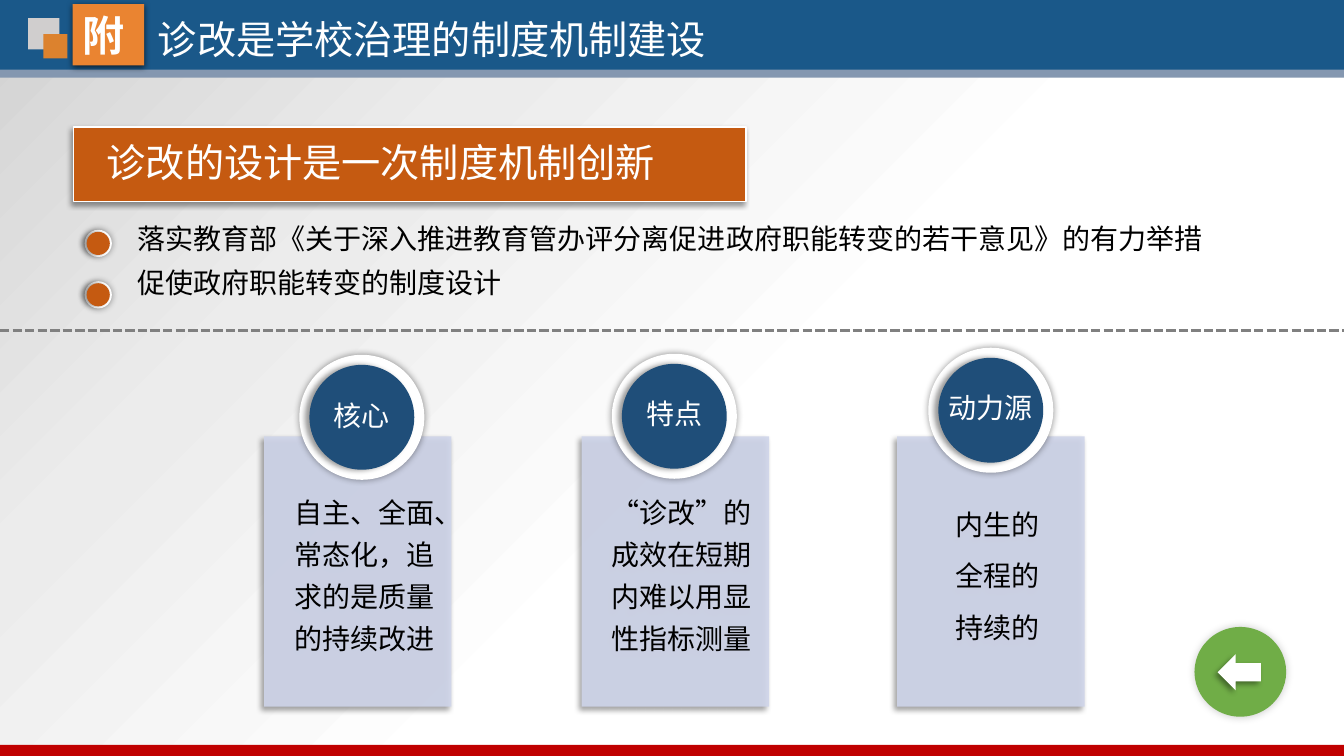
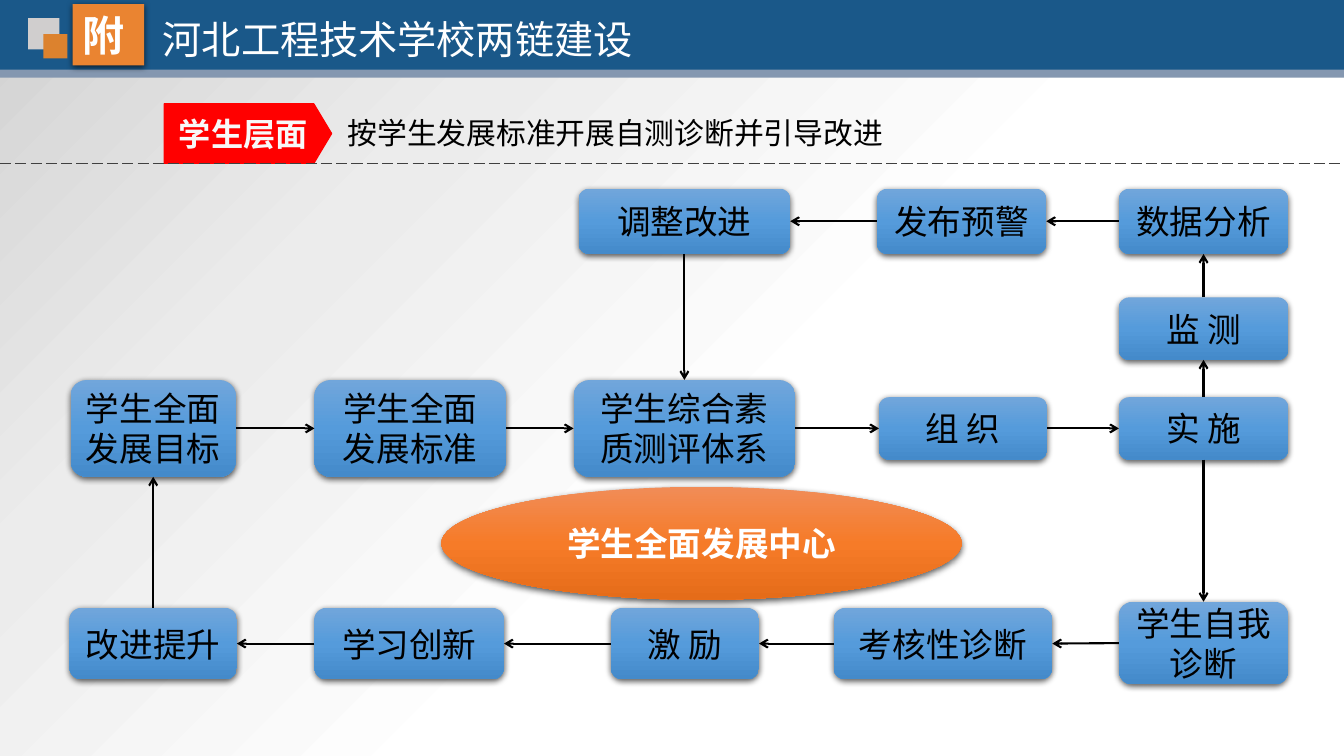
from lxml import etree
from pptx import Presentation
from pptx.dml.color import RGBColor
from pptx.enum.dml import MSO_LINE
from pptx.enum.shapes import MSO_CONNECTOR, MSO_SHAPE
from pptx.enum.text import MSO_ANCHOR, MSO_AUTO_SIZE, PP_ALIGN
from pptx.oxml.ns import qn
from pptx.util import Pt

# Lengths are px, 100 to the inch
PX = 9144
SLIDE_W, SLIDE_H = 12192000, 6858000
FULL_W = 1333
FONT = "Noto Sans CJK SC"

# Enum members
RECT, ROUND_RECT, OVAL = MSO_SHAPE.RECTANGLE, MSO_SHAPE.ROUNDED_RECTANGLE, MSO_SHAPE.OVAL
HOME_PLATE, LEFT_ARROW = MSO_SHAPE.PENTAGON, MSO_SHAPE.LEFT_ARROW
STRAIGHT = MSO_CONNECTOR.STRAIGHT
SHORT_DASH, LONG_DASH = MSO_LINE.SQUARE_DOT, MSO_LINE.LONG_DASH
MIDDLE, TOP_ANCHOR = MSO_ANCHOR.MIDDLE, MSO_ANCHOR.TOP
ALIGN_LEFT, ALIGN_CENTER = PP_ALIGN.LEFT, PP_ALIGN.CENTER
NO_FIT = MSO_AUTO_SIZE.NONE

# Connection sites of a rectangle
TOP, LEFT, BOTTOM, RIGHT = range(4)

# Colours
WHITE = RGBColor(0xFF, 0xFF, 0xFF)
OFF_WHITE = RGBColor(0xF8, 0xF8, 0xF8)
BLACK = RGBColor(0, 0, 0)
GREY = RGBColor(0x80, 0x80, 0x80)
DARK_GREY = RGBColor(0x40, 0x40, 0x40)
LIGHT_GREY = RGBColor(0xD0, 0xCE, 0xCE)
HEADER_BLUE = RGBColor(0x1A, 0x58, 0x89)
STRIPE_BLUE = RGBColor(0x84, 0x97, 0xB0)
DEEP_BLUE = RGBColor(0x1F, 0x4E, 0x79)
CARD_BLUE = RGBColor(0xCF, 0xD5, 0xEA)
BADGE_ORANGE = RGBColor(0xEA, 0x84, 0x31)
SQUARE_ORANGE = RGBColor(0xDC, 0x82, 0x2E)
RUST = RGBColor(0xC5, 0x5A, 0x11)
GREEN = RGBColor(0x70, 0xAD, 0x47)
RED = RGBColor(0xFF, 0, 0)
DARK_RED = RGBColor(0xC0, 0, 0)

# Gradients: stops in percent, then the angle
PAGE_GRADIENT = [(0, RGBColor(0xD2, 0xD2, 0xD2)), (27, RGBColor(0xEC, 0xEC, 0xEC)),
                 (57, WHITE)], 45
NODE_GRADIENT = [(0, RGBColor(0x71, 0xA6, 0xDB)), (50, RGBColor(0x55, 0x9B, 0xDB)),
                 (100, RGBColor(0x44, 0x8A, 0xCA))], 90
CENTRE_GRADIENT = [(0, RGBColor(0xF1, 0x8C, 0x57)), (50, RGBColor(0xF6, 0x7B, 0x28)),
                   (100, RGBColor(0xE5, 0x6C, 0x19))], 90

# Shadows: opacity in percent, blur and distance in points, direction
DROP = 40, 4, 3, 135
HALO = 40, 5, 0, 0
SIDE = 40, 4, 3, 180
SOFT = 63, 4.5, 1.5, 90
BUTTON = 20, 6, 0, 225


def add_xml(parent, tag, **attributes):
    return etree.SubElement(parent, qn(tag), {k: str(v) for k, v in attributes.items()})


def set_gradient(fill, owner, gradient):
    """Give the fill the stops and angle of a gradient."""
    stops, angle = gradient
    fill.gradient()
    grad = owner.find(".//" + qn("a:gradFill"))
    for child in list(grad):
        grad.remove(child)
    stop_list = add_xml(grad, "a:gsLst")
    for percent, color in stops:
        add_xml(add_xml(stop_list, "a:gs", pos=percent * 1000), "a:srgbClr", val=color)
    add_xml(grad, "a:lin", ang=angle * 60000, scaled=0)


class Deck:
    def __init__(self):
        self.prs = Presentation()
        self.prs.slide_width, self.prs.slide_height = SLIDE_W, SLIDE_H
        master = self.prs.slide_master
        set_gradient(master.background.fill, master.element, PAGE_GRADIENT)
        self.layout = self.prs.slide_layouts[1]
        for footer in [p for p in self.layout.placeholders if p.placeholder_format.idx >= 10]:
            self.layout.shapes.element.remove(footer.element)
        self.slide = None

    def new_slide(self, title, left):
        first = self.slide is None
        self.slide = self.prs.slides.add_slide(self.layout)
        if first:
            self.header()
        heading = self.slide.shapes.title
        self.place(heading, left, 6, 575, 65)
        self.set_text(heading, title, 28, WHITE)

    def header(self):
        """Draw the header bands once and keep them in the layout."""
        bands = [
            self.shape(RECT, 0, 0, FULL_W + 1, 76, HEADER_BLUE),
            self.shape(RECT, 0, 69, FULL_W + 1, 8, STRIPE_BLUE),
            self.shape(RECT, 28, 18, 31, 31, LIGHT_GREY),
            self.shape(RECT, 43, 34, 24, 24, SQUARE_ORANGE),
        ]
        badge = self.shape(RECT, 72, 4, 71, 61, BADGE_ORANGE, SOFT)
        self.set_text(badge, "附", 30, WHITE, bold=True, align=ALIGN_LEFT,
                      insets=(10, 0, 10, 0))
        for part in bands + [badge]:
            self.layout.shapes.element.append(part.element)

    def place(self, shape, left, top, width, height):
        shape.left, shape.top = left * PX, top * PX
        shape.width, shape.height = width * PX, height * PX

    def shape(self, kind, left, top, width, height, fill, shadow=None, line=None, opacity=100):
        shape = self.slide.shapes.add_shape(
            kind, left * PX, top * PX, width * PX, height * PX)
        if isinstance(fill, RGBColor):
            shape.fill.solid()
            shape.fill.fore_color.rgb = fill
        else:
            set_gradient(shape.fill, shape.element.spPr, fill)
        if opacity < 100:
            color = shape.element.spPr.find(".//" + qn("a:srgbClr"))
            add_xml(color, "a:alpha", val=opacity * 1000)
        if line:
            shape.line.color.rgb = line
            shape.line.width = Pt(1)
        else:
            shape.line.fill.background()
        shape.shadow.inherit = False
        if shadow:
            strength, blur, distance, direction = shadow
            outer = add_xml(shape.element.spPr.find(qn("a:effectLst")), "a:outerShdw",
                            blurRad=Pt(blur), dist=Pt(distance), dir=direction * 60000,
                            algn="ctr", rotWithShape=0)
            black = add_xml(outer, "a:srgbClr", val=BLACK)
            add_xml(black, "a:alpha", val=strength * 1000)
        return shape

    def set_text(self, shape, text, size, color, bold=False, align=ALIGN_CENTER, anchor=MIDDLE,
                 insets=(10, 5, 10, 5), wrap=True, leading=None, after=0):
        frame = shape.text_frame
        frame.text = text
        frame.auto_size = NO_FIT
        frame.word_wrap = wrap
        frame.vertical_anchor = anchor
        (frame.margin_left, frame.margin_top,
         frame.margin_right, frame.margin_bottom) = [inset * PX for inset in insets]
        for paragraph in frame.paragraphs:
            paragraph.alignment = align
            paragraph.space_before = Pt(0)
            paragraph.space_after = Pt(after)
            if leading:
                paragraph.line_spacing = Pt(leading)
            for run in paragraph.runs:
                run.font.size, run.font.bold, run.font.name = Pt(size), bold, FONT
                run.font.color.rgb = color
                properties = run._r.get_or_add_rPr()
                properties.set("lang", "zh-CN")
                add_xml(properties, "a:ea", typeface=FONT)

    def body(self, text, box, size, **style):
        """Fill the body placeholder with unmarked lines."""
        body = self.slide.placeholders[1]
        self.place(body, *box)
        self.set_text(body, text, size, BLACK, align=ALIGN_LEFT, **style)
        for paragraph in body.text_frame.paragraphs:
            properties = paragraph._p.get_or_add_pPr()
            properties.set("marL", "0")
            properties.set("indent", "0")
            add_xml(properties, "a:buNone")

    def connector(self, color, width, start=(0, 0), end=(0, 0)):
        x1, y1, x2, y2 = [value * PX for value in (*start, *end)]
        line = self.slide.shapes.add_connector(STRAIGHT, x1, y1, x2, y2)
        line.line.color.rgb = color
        line.line.width = Pt(width)
        add_xml(line.element.spPr, "a:effectLst")
        return line

    def divider(self, top, color, width, dash):
        line = self.connector(color, width, (0, top), (FULL_W, top))
        line.line.dash_style = dash

    def arrow(self, source, source_side, target, target_side):
        line = self.connector(BLACK, 1.5)
        line.begin_connect(source, source_side)
        line.end_connect(target, target_side)
        add_xml(line.element.spPr.find(qn("a:ln")), "a:tailEnd", type="arrow")

    def ringed_disc(self, left, top, size, rim, color):
        self.shape(OVAL, left, top, size, size, WHITE, HALO)
        inner = size - 2 * rim
        return self.shape(OVAL, left + rim, top + rim, inner, inner, color, SIDE)

    def node(self, text, left, middle, width, height):
        node = self.shape(ROUND_RECT, left, middle - height // 2, width, height,
                          NODE_GRADIENT, SOFT)
        self.set_text(node, text, 24, BLACK)
        return node


def build_mechanism(deck):
    deck.new_slide("诊改是学校治理的制度机制建设", 141)

    # Banner and its two points
    banner = deck.shape(RECT, 73, 126, 667, 74, RUST, DROP, line=WHITE)
    deck.set_text(banner, "诊改的设计是一次制度机制创新", 28, WHITE, align=ALIGN_LEFT,
                  insets=(33, 0, 0, 5))
    deck.body("落实教育部《关于深入推进教育管办评分离促进政府职能转变的若干意见》的有力举措\n"
              "促使政府职能转变的制度设计",
              (126, 215, 1083, 100), 20, anchor=TOP_ANCHOR, after=7)
    for top in (228, 279):
        deck.ringed_disc(84, top, 27, 2, RUST)
    deck.divider(328, GREY, 2.25, SHORT_DASH)

    # Cards, each under a disc
    cards = [
        ("核心", 297, 352, "自主、全面、常态化，追求的是质量的持续改进", 262, ALIGN_CENTER),
        ("特点", 607, 351, "“诊改”的成效在短期内难以用显性指标测量", 577, ALIGN_LEFT),
        ("动力源", 921, 345, "内生的\n全程的\n持续的", 890, ALIGN_CENTER),
    ]
    for label, disc_left, disc_top, text, card_left, align in cards:
        card = deck.shape(RECT, card_left, 433, 186, 268, CARD_BLUE, DROP, opacity=90)
        deck.set_text(card, text, 20, BLACK, align=align, insets=(30, 16, 16, 16),
                      leading=30, after=7)
        disc = deck.ringed_disc(disc_left, disc_top, 124, 10, DEEP_BLUE)
        deck.set_text(disc, label, 20, WHITE, insets=(0, 0, 0, 5), wrap=False)

    # Back button and bottom bar
    deck.shape(OVAL, 1185, 622, 91, 89, GREEN, BUTTON)
    deck.shape(LEFT_ARROW, 1208, 649, 43, 36, WHITE, DROP)
    deck.shape(RECT, 0, 739, FULL_W + 1, 11, DARK_RED)


def build_student_chain(deck):
    deck.new_slide("河北工程技术学校两链建设", 107)

    # Section tag and summary
    tag = deck.shape(HOME_PLATE, 163, 103, 166, 59, RED, line=RED)
    tag.adjustments[0] = 0.3
    deck.set_text(tag, "学生层面", 23, OFF_WHITE, bold=True, wrap=False)
    deck.body("按学生发展标准开展自测诊断并引导改进", (335, 109, 560, 46), 21.3, wrap=False)
    deck.divider(162, DARK_GREY, 1, LONG_DASH)

    # Steps: left, middle of the row, width, height
    alert_row, monitor_row, main_row, review_row = 219, 326, 425, 638
    goal, standard, system = "学生全面发展目标", "学生全面发展标准", "学生综合素质测评体系"
    organise, carry_out, monitor = "组 织", "实 施", "监 测"
    analyse, alert, adjust = "数据分析", "发布预警", "调整改进"
    self_check, assess, motivate = "学生自我\n诊断", "考核性诊断", "激 励"
    innovate, improve = "学习创新", "改进提升"
    places = {
        goal: (70, main_row, 164, 96),
        standard: (312, main_row, 190, 96),
        system: (569, main_row, 220, 96),
        organise: (872, main_row, 167, 62),
        carry_out: (1110, main_row, 168, 62),
        monitor: (1110, monitor_row, 168, 62),
        analyse: (1110, alert_row, 168, 65),
        alert: (870, alert_row, 168, 65),
        adjust: (574, alert_row, 210, 65),
        self_check: (1110, review_row, 168, 82),
        assess: (827, review_row, 217, 71),
        motivate: (606, review_row, 147, 71),
        innovate: (312, review_row, 188, 71),
        improve: (69, review_row, 166, 71),
    }
    nodes = {text: deck.node(text, *place) for text, place in places.items()}

    # Arrows along each run of steps
    runs = [
        (RIGHT, LEFT, [goal, standard, system, organise, carry_out]),
        (TOP, BOTTOM, [carry_out, monitor, analyse]),
        (LEFT, RIGHT, [analyse, alert, adjust]),
        (BOTTOM, TOP, [adjust, system]),
        (BOTTOM, TOP, [carry_out, self_check]),
        (LEFT, RIGHT, [self_check, assess, motivate, innovate, improve]),
        (TOP, BOTTOM, [improve, goal]),
    ]
    for side_out, side_in, steps in runs:
        for source, target in zip(steps, steps[1:]):
            deck.arrow(nodes[source], side_out, nodes[target], side_in)

    # Centre of the chain
    centre = deck.shape(OVAL, 438, 483, 516, 112, CENTRE_GRADIENT, SOFT)
    deck.set_text(centre, "学生全面发展中心", 24, WHITE, bold=True)


def main():
    deck = Deck()
    build_mechanism(deck)
    build_student_chain(deck)
    deck.prs.save("out.pptx")


if __name__ == "__main__":
    main()
